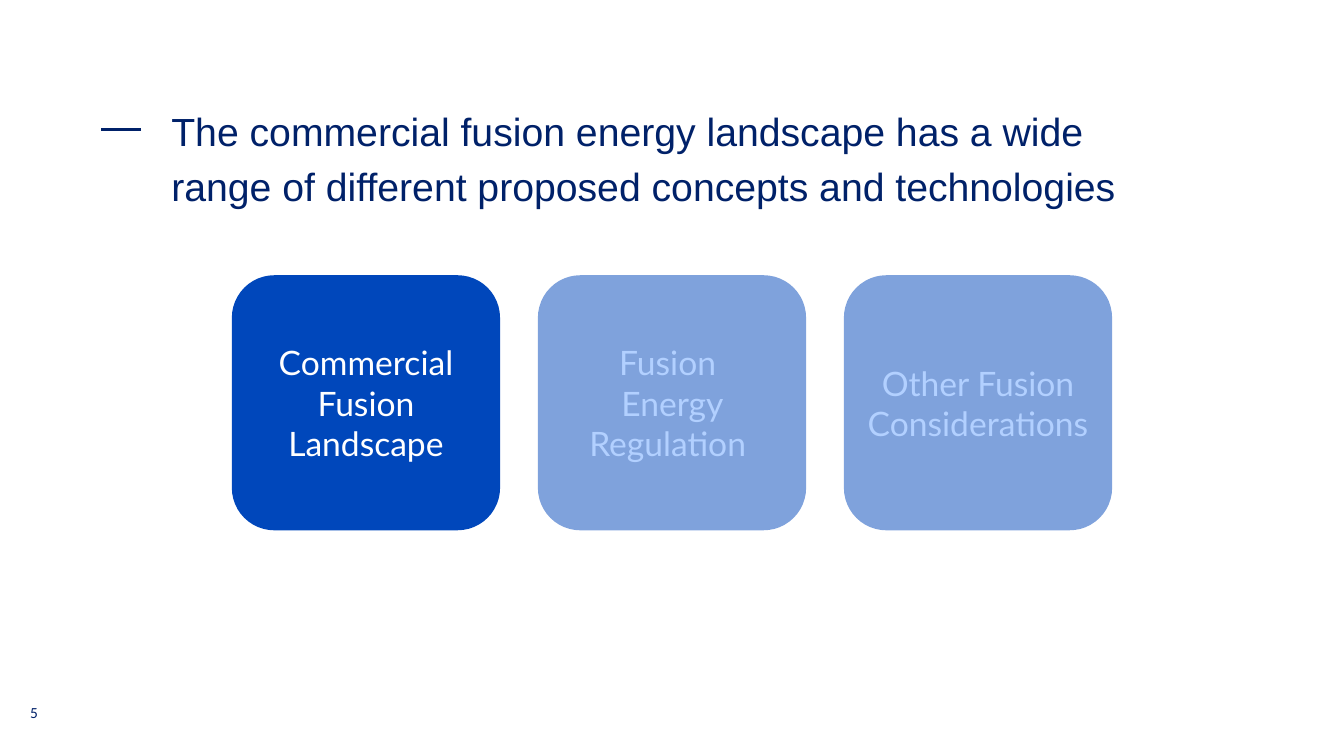
from lxml import etree
from pptx import Presentation
from pptx import util as u
from pptx.dml.color import RGBColor
from pptx.enum import shapes, text
from pptx.oxml.ns import qn

Pt = u.Pt
NAVY = RGBColor(0x00, 0x21, 0x69)
BLUE = RGBColor(0x00, 0x47, 0xBB)
PALE_BLUE = RGBColor(0xB2, 0xD0, 0xFF)
WHITE = RGBColor(0xFF, 0xFF, 0xFF)

TITLE = ("The commercial fusion energy landscape has a wide "
         "range of different proposed concepts and technologies")
TITLE_FORMAT = {"name": "Arial", "size": Pt(28)}
NUMBER_FORMAT = {"name": "Calibri", "size": Pt(11)}
CARD_FORMAT = {"name": "Lato", "size": Pt(24)}

TOPICS = ["Commercial Fusion Landscape",
          "Fusion \vEnergy Regulation ",
          "Other Fusion Considerations"]
ACTIVE_TOPIC = 0
CARD_LEFT, CARD_TOP, CARD_WIDTH, CARD_HEIGHT = 165.6, 196.6, 191.6, 182.2
CARD_PITCH = 218.6


def write(paragraph, words, color, font_format):
    paragraph.text = words
    for name, value in font_format.items():
        setattr(paragraph.font, name, value)
    paragraph.font.color.rgb = color


def add_text(slide, box, words, font_format, inset=0, line_spacing=None):
    """Add a navy text box; inset is the top and bottom margin."""
    frame = slide.shapes.add_textbox(*map(Pt, box)).text_frame
    frame_format = {"word_wrap": True, "margin_left": 0, "margin_right": 0,
                    "margin_top": Pt(inset), "margin_bottom": Pt(inset)}
    for name, value in frame_format.items():
        setattr(frame, name, value)
    paragraph = frame.paragraphs[0]
    write(paragraph, words, NAVY, font_format)
    paragraph.line_spacing = line_spacing


def add_title_dash(slide):
    dash = slide.shapes.add_connector(
        shapes.MSO_CONNECTOR.STRAIGHT, Pt(100.8), Pt(92.6), Pt(72), Pt(92.6))
    dash.line.color.rgb = NAVY
    dash.line.width = Pt(2.5)
    etree.SubElement(dash._element.spPr, qn("a:effectLst"))


def add_card(slide, left, topic, active):
    """Add a rounded topic card, half transparent unless active."""
    card = slide.shapes.add_shape(
        shapes.MSO_SHAPE.ROUNDED_RECTANGLE,
        *map(Pt, (left, CARD_TOP, CARD_WIDTH, CARD_HEIGHT)))
    card.shadow.inherit = False
    card.line.fill.background()
    card.fill.solid()
    card.fill.fore_color.rgb = BLUE
    if not active:
        color = card._element.spPr.find(qn("a:solidFill"))[0]
        etree.SubElement(color, qn("a:alpha"), val="50000")
    frame = card.text_frame
    frame.word_wrap = True
    frame.vertical_anchor = text.MSO_ANCHOR.MIDDLE
    paragraph = frame.paragraphs[0]
    paragraph.alignment = text.PP_ALIGN.CENTER
    write(paragraph, topic, WHITE if active else PALE_BLUE, CARD_FORMAT)


def main():
    presentation = Presentation()
    presentation.slide_width = Pt(960)
    presentation.slide_height = Pt(540)
    slide = presentation.slides.add_slide(presentation.slide_layouts[6])

    add_title_dash(slide)
    add_text(slide, (122.4, 72, 730, 72), TITLE, TITLE_FORMAT, line_spacing=1.15)
    add_text(slide, (21.6, 499, 34.6, 28.8), "5", NUMBER_FORMAT, inset=3.6)
    for index, topic in enumerate(TOPICS):
        add_card(slide, CARD_LEFT + index * CARD_PITCH, topic,
                 index == ACTIVE_TOPIC)

    presentation.save("out.pptx")


if __name__ == "__main__":
    main()
